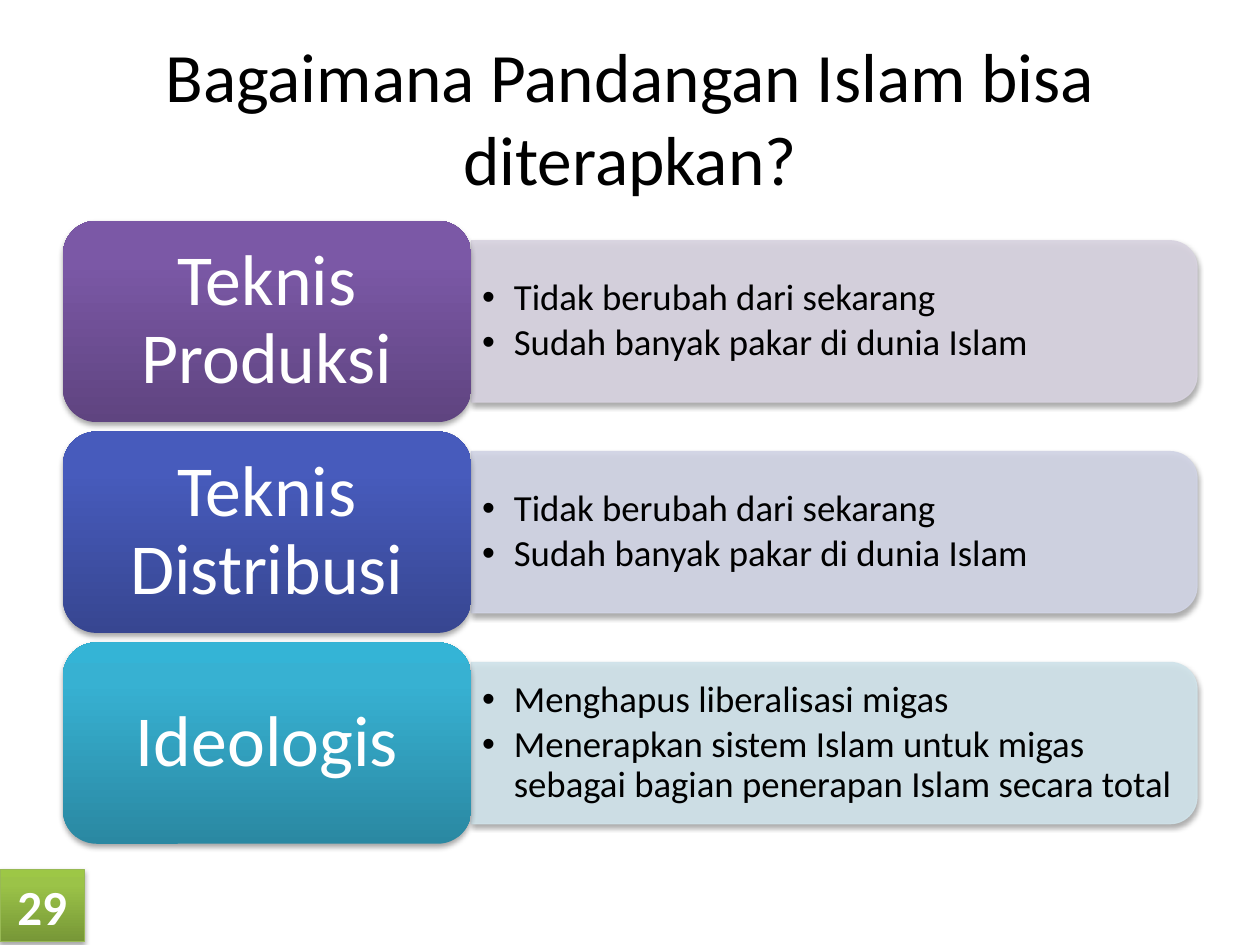
from dataclasses import dataclass

import pptx
import pptx.dml.color
import pptx.enum.shapes
import pptx.enum.text
import pptx.oxml
import pptx.oxml.ns
import pptx.util
from pptx.util import Cm

FONT = "Calibri"
COLORS = {
    "text": "000000",
    "light": "FFFFFF",
    "badge_line": "98B955",
}
GRADIENTS = {
    "purple": ("5F4480", "7B58A6", "7C57A8"),
    "blue": ("374691", "475BBC", "455ABF"),
    "teal": ("2A88A2", "37B1D2", "34B4D6"),
    "green": ("779737", "9BC348", "9DC746"),
}
PANELS = {"purple": "D8D3E0", "blue": "D1D4E5", "teal": "D0E3EA"}

LEFT, TOP, PITCH = 1.27, 4.45, 4.25
TILE_WIDTH, TILE_HEIGHT = 8.23, 4.06
PANEL_LEFT, PANEL_WIDTH, PANEL_HEIGHT = LEFT + TILE_WIDTH, 14.63, 3.25


@dataclass
class Aspect:
    label: str
    hue: str
    points: tuple[str, ...]


ASPECTS = [
    Aspect("Teknis Produksi", "purple",
           ("Tidak berubah dari sekarang", "Sudah banyak pakar di dunia Islam")),
    Aspect("Teknis Distribusi", "blue",
           ("Tidak berubah dari sekarang", "Sudah banyak pakar di dunia Islam")),
    Aspect("Ideologis", "teal",
           ("Menghapus liberalisasi migas",
            "Menerapkan sistem Islam untuk migas sebagai bagian penerapan Islam secara total")),
]


def rgb(value: str) -> pptx.dml.color.RGBColor:
    return pptx.dml.color.RGBColor.from_string(value)


def element(xml: str):
    namespace = pptx.oxml.ns.nsdecls("a")
    return pptx.oxml.parse_xml(xml.replace(" ", f" {namespace} ", 1))


def add_shadow(shape) -> None:
    shape.shadow.inherit = False
    effects = shape._element.spPr.find(pptx.oxml.ns.qn("a:effectLst"))
    effects.append(element(
        '<a:outerShdw blurRad="40000" dist="23000" dir="5400000" rotWithShape="0">'
        '<a:srgbClr val="000000"><a:alpha val="35000"/></a:srgbClr></a:outerShdw>'))


def fill_gradient(shape, hue: str) -> None:
    stops = "".join(
        f'<a:gs pos="{position}"><a:srgbClr val="{color}"/></a:gs>'
        for position, color in zip((0, 80000, 100000), GRADIENTS[hue]))
    shape.fill.gradient()
    gradient = shape._element.spPr.find(pptx.oxml.ns.qn("a:gradFill"))
    shape._element.spPr.replace(gradient, element(
        f'<a:gradFill rotWithShape="1"><a:gsLst>{stops}</a:gsLst>'
        '<a:lin ang="16200000" scaled="0"/></a:gradFill>'))


def set_frame(shape, horizontal: float, vertical: float):
    frame = shape.text_frame
    frame.word_wrap = True
    frame.vertical_anchor = pptx.enum.text.MSO_ANCHOR.MIDDLE
    frame.margin_left = frame.margin_right = Cm(horizontal)
    frame.margin_top = frame.margin_bottom = Cm(vertical)
    return frame


def add_run(paragraph, text: str, size: float, color: str, bold: bool = False) -> None:
    run = paragraph.add_run()
    run.text = text
    run.font.name = FONT
    run.font.size = pptx.util.Pt(size)
    run.font.bold = bold
    run.font.color.rgb = rgb(COLORS[color])


def add_centered(shape, text: str, size: float, color: str, margins: tuple[float, float],
                 bold: bool = False, spacing: float = 1.0) -> None:
    paragraph = set_frame(shape, *margins).paragraphs[0]
    paragraph.alignment = pptx.enum.text.PP_ALIGN.CENTER
    paragraph.line_spacing = spacing
    add_run(paragraph, text, size, color, bold)


def add_panel(slide, aspect: Aspect, top: float) -> None:
    offset = (PANEL_WIDTH - PANEL_HEIGHT) / 2
    panel = slide.shapes.add_shape(
        pptx.enum.shapes.MSO_SHAPE.ROUND_2_SAME_RECTANGLE,
        Cm(PANEL_LEFT + offset), Cm(top - offset), Cm(PANEL_HEIGHT), Cm(PANEL_WIDTH))
    panel.rotation = 90
    panel.fill.solid()
    panel.fill.fore_color.rgb = rgb(PANELS[aspect.hue])
    panel.line.color.rgb = rgb(PANELS[aspect.hue])
    panel.line.width = pptx.util.Pt(0.75)
    for color in panel._element.spPr.iter(pptx.oxml.ns.qn("a:srgbClr")):
        color.append(element('<a:alpha val="90000"/>'))
    add_shadow(panel)


def add_points(slide, aspect: Aspect, top: float) -> None:
    points = slide.shapes.add_textbox(
        Cm(PANEL_LEFT), Cm(top + 0.16), Cm(14.48), Cm(2.93))
    frame = set_frame(points, 0.22, 0.11)
    for index, text in enumerate(aspect.points):
        paragraph = frame.add_paragraph() if index else frame.paragraphs[0]
        paragraph.level = 1
        paragraph.line_spacing = 0.9
        paragraph.space_after = pptx.util.Pt(3.15)
        properties = paragraph._p.get_or_add_pPr()
        properties.set("marL", str(Cm(0.64)))
        properties.set("indent", str(-Cm(0.64)))
        properties.append(element('<a:buFont typeface="Arial"/>'))
        properties.append(element('<a:buChar char="•"/>'))
        add_run(paragraph, text, 21, "text")


def add_tile(slide, aspect: Aspect, top: float) -> None:
    tile = slide.shapes.add_shape(
        pptx.enum.shapes.MSO_SHAPE.ROUNDED_RECTANGLE,
        Cm(LEFT), Cm(top), Cm(TILE_WIDTH), Cm(TILE_HEIGHT))
    fill_gradient(tile, aspect.hue)
    tile.line.fill.background()
    add_shadow(tile)
    add_centered(tile, aspect.label, 41, "light", (0.43, 0.23), spacing=0.9)


def add_badge(slide, number: str) -> None:
    badge = slide.shapes.add_shape(
        pptx.enum.shapes.MSO_SHAPE.RECTANGLE, Cm(0), Cm(17.53), Cm(1.7), Cm(1.45))
    fill_gradient(badge, "green")
    badge.line.color.rgb = rgb(COLORS["badge_line"])
    badge.line.width = pptx.util.Pt(0.75)
    add_shadow(badge)
    add_centered(badge, number, 28, "light", (0.25, 0.13), bold=True)


def main() -> None:
    deck = pptx.Presentation()
    deck.slide_width, deck.slide_height = Cm(25.4), Cm(19.05)
    slide = deck.slides.add_slide(deck.slide_layouts[6])

    title = slide.shapes.add_textbox(Cm(LEFT), Cm(0.76), Cm(22.86), Cm(3.18))
    add_centered(title, "Bagaimana Pandangan Islam bisa diterapkan?", 39.6, "text", (0.25, 0.13))

    for row, aspect in enumerate(ASPECTS):
        top = TOP + row * PITCH
        panel_top = top + (TILE_HEIGHT - PANEL_HEIGHT) / 2
        add_panel(slide, aspect, panel_top)
        add_points(slide, aspect, panel_top)
        add_tile(slide, aspect, top)

    add_badge(slide, "29")
    deck.save("out.pptx")


if __name__ == "__main__":
    main()
